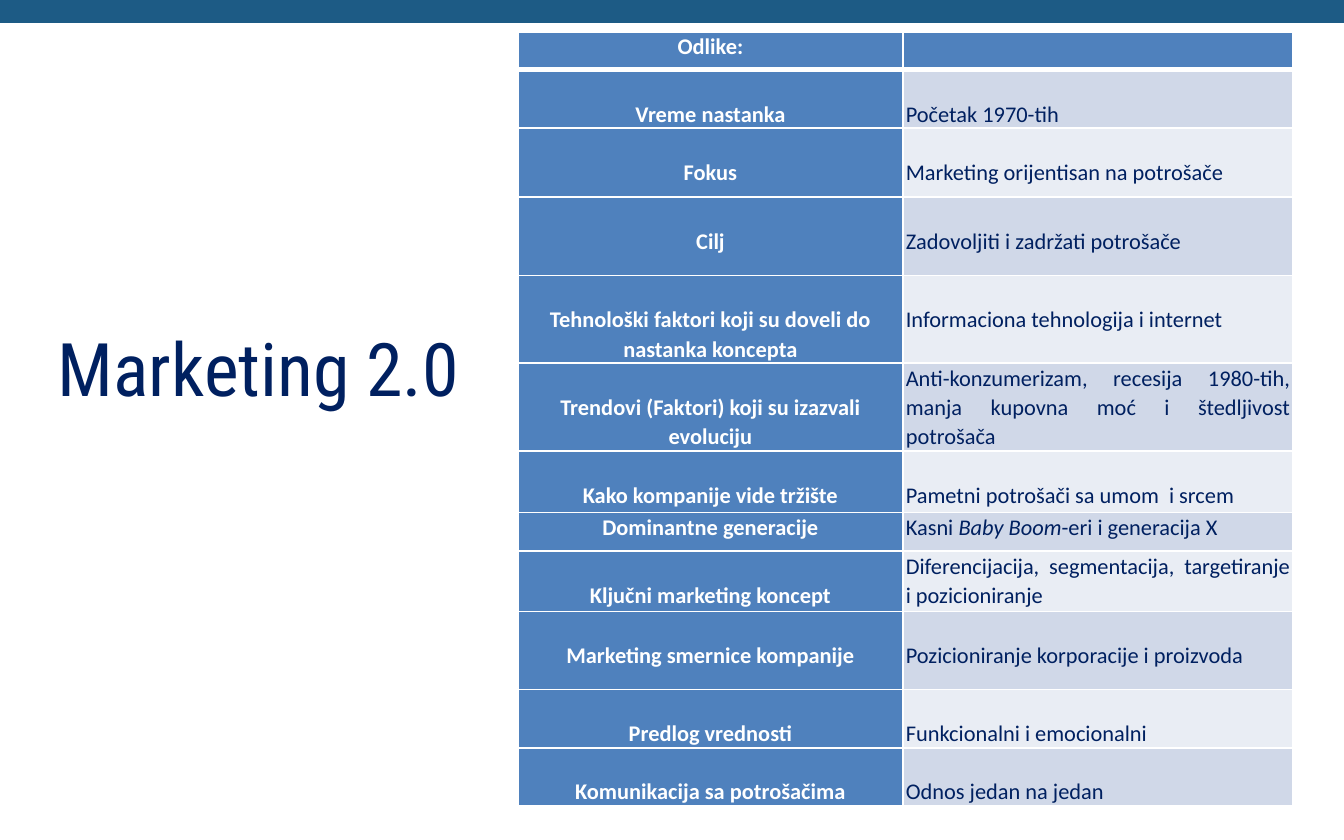
from lxml.etree import SubElement
from pptx import Presentation
from pptx.dml.color import RGBColor
from pptx.enum.shapes import MSO_SHAPE
from pptx.enum.text import MSO_ANCHOR, MSO_AUTO_SIZE, PP_ALIGN
from pptx.oxml.ns import qn
from pptx.util import Pt

LINE = 15.6  # height of one text line in the table

# label, lines above label, value runs (text, italic), lines above value, row height
ROWS = [
    ("Odlike:", 0, [], 0, 20.4),
    ("Vreme nastanka", 1, [("Početak 1970-tih", False)], 1, 30.6),
    ("Fokus", 1, [("Marketing orijentisan na potrošače", False)], 1, 37),
    ("Cilj", 1, [("Zadovoljiti i zadržati potrošače", False)], 1, 42),
    ("Tehnološki faktori koji su doveli do nastanka koncepta", 1,
     [("Informaciona tehnologija i internet", False)], 1, 45.8),
    ("Trendovi (Faktori) koji su izazvali evoluciju", 1,
     [("Anti-konzumerizam, recesija 1980-tih, manja kupovna moć i štedljivost potrošača", False)],
     0, 47),
    ("Kako kompanije vide tržište", 1, [("Pametni potrošači sa umom  i srcem", False)], 1, 33),
    ("Dominantne generacije", 0,
     [("Kasni ", False), ("Baby Boom", True), ("-eri i generacija X", False)], 0, 20.6),
    ("Ključni marketing koncept", 1,
     [("Diferencijacija, segmentacija, targetiranje i pozicioniranje", False)], 0, 32.4),
    ("Marketing smernice kompanije", 1,
     [("Pozicioniranje korporacije i proizvoda", False)], 1, 41.8),
    ("Predlog vrednosti", 1, [("Funkcionalni i emocionalni", False)], 1, 31.2),
    ("Komunikacija sa potrošačima", 1, [("Odnos jedan na jedan", False)], 1, 30.6),
]


def color(value):
    return RGBColor.from_string(value)


class SlideBuilder:
    navy, white, bar_blue = "002060", "FFFFFF", "1D5B85"
    label_fill, band_fills = "4F81BD", ("E9EDF4", "D0D8E8")
    title_font, table_font = "Roboto Condensed", "Calibri"

    def __init__(self, slide):
        self.slide = slide

    def bar(self, left, top, width, height):
        shape = self.slide.shapes.add_shape(
            MSO_SHAPE.RECTANGLE, Pt(left), Pt(top), Pt(width), Pt(height))
        shape.shadow.inherit = False
        shape.fill.solid()
        shape.fill.fore_color.rgb = color(self.bar_blue)
        shape.line.fill.background()

    def run(self, paragraph, text, font, size, text_color, bold=False, italic=False):
        run = paragraph.add_run()
        run.text = text
        run.font.name, run.font.size = font, Pt(size)
        run.font.bold, run.font.italic = bold, italic
        run.font.color.rgb = color(text_color)

    def title(self, text, left, top, width, height):
        title = self.slide.shapes.title
        title.left, title.top, title.width, title.height = map(Pt, (left, top, width, height))
        frame = title.text_frame
        frame.word_wrap = True
        frame.auto_size = MSO_AUTO_SIZE.NONE
        frame.vertical_anchor = MSO_ANCHOR.MIDDLE
        frame.margin_top = frame.margin_bottom = 0
        paragraph = frame.paragraphs[0]
        paragraph.alignment = PP_ALIGN.CENTER
        self.run(paragraph, text, self.title_font, 39.6, self.navy)

    def borders(self, cell, top, bottom):
        properties = cell._tc.get_or_add_tcPr()
        for side, width in (("L", 1), ("R", 1), ("T", top), ("B", bottom)):
            line = SubElement(properties, qn(f"a:ln{side}"), w=str(Pt(width)))
            fill = SubElement(line, qn("a:solidFill"))
            SubElement(fill, qn("a:srgbClr"), val=self.white)

    def cell(self, cell, runs, lines_above, alignment, fill, text_color, bold):
        cell.margin_left = cell.margin_right = Pt(1.5)
        cell.margin_top, cell.margin_bottom = Pt(lines_above * LINE), 0
        cell.fill.solid()
        cell.fill.fore_color.rgb = color(fill)
        paragraph = cell.text_frame.paragraphs[0]
        paragraph.alignment = alignment
        paragraph.line_spacing = 1.07
        for text, italic in runs:
            self.run(paragraph, text, self.table_font, 12, text_color, bold, italic)
        if not runs:
            SubElement(paragraph._p, qn("a:endParaRPr"), sz="1200")

    def table(self, rows, left, top, widths):
        heights = [row[-1] for row in rows]
        table = self.slide.shapes.add_table(
            len(rows), len(widths), Pt(left), Pt(top), Pt(sum(widths)), Pt(sum(heights))).table
        for column, width in zip(table.columns, widths):
            column.width = Pt(width)
        for index, (label, label_gap, value, value_gap, height) in enumerate(rows):
            table.rows[index].height = Pt(height)
            label_cell, value_cell = table.cell(index, 0), table.cell(index, 1)
            for cell in (label_cell, value_cell):
                self.borders(cell, 3 if index == 1 else 1, 3 if index == 0 else 1)
            self.cell(label_cell, [(label, False)], label_gap, PP_ALIGN.CENTER,
                      self.label_fill, self.white, True)
            value_fill = self.band_fills[index % 2] if index else self.label_fill
            self.cell(value_cell, value, value_gap, PP_ALIGN.JUSTIFY,
                      value_fill, self.navy, False)


def main():
    presentation = Presentation()
    presentation.slide_width, presentation.slide_height = Pt(720), Pt(450)
    builder = SlideBuilder(presentation.slides.add_slide(presentation.slide_layouts[5]))
    builder.bar(0, 0, 720, 12.3)
    builder.title("Marketing 2.0", 0, 181.5, 277, 30)
    builder.table(ROWS, 277.4, 17, (206.4, 209))
    presentation.save("out.pptx")


if __name__ == "__main__":
    main()
